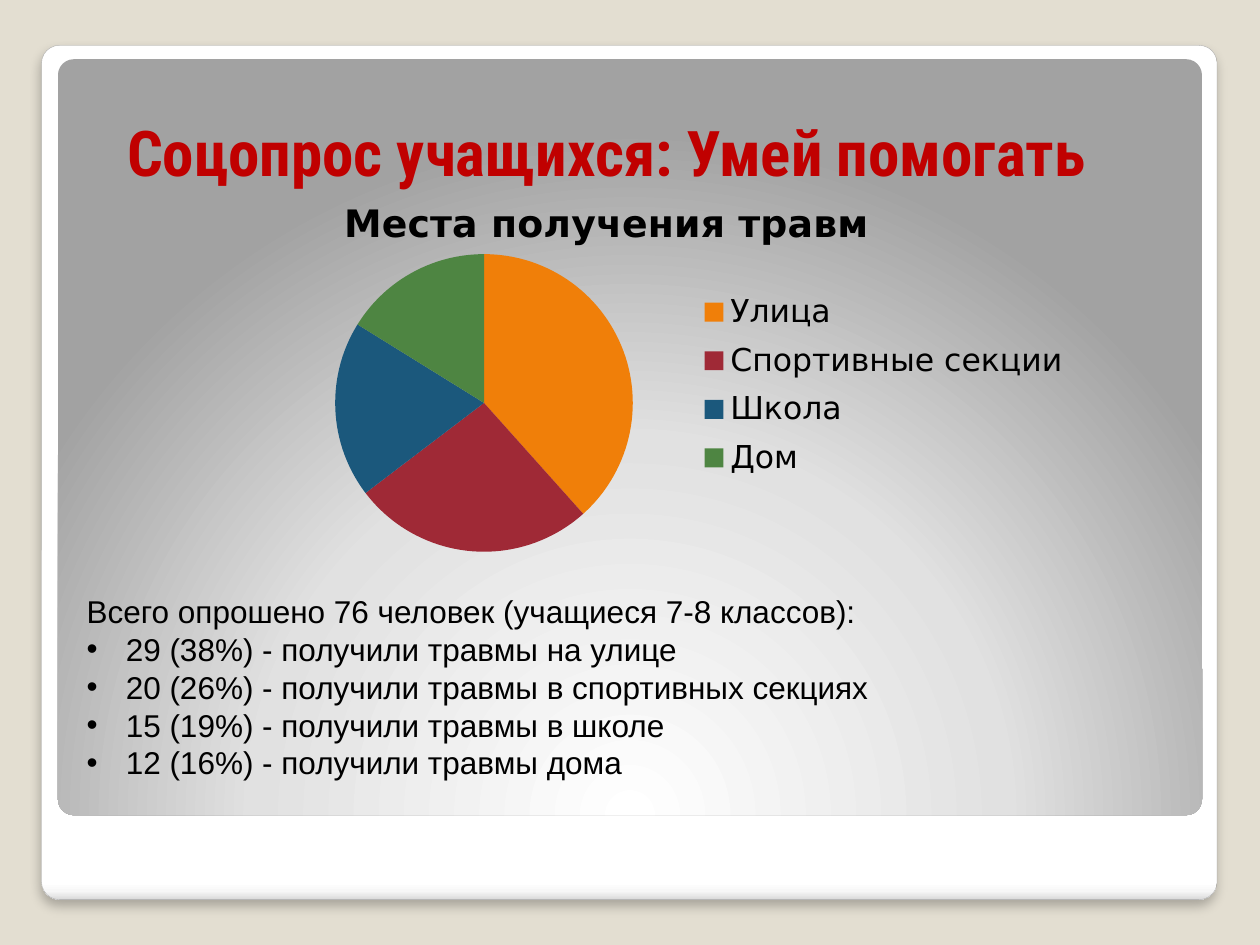
from lxml import etree
from pptx import Presentation
from pptx.chart.data import CategoryChartData
from pptx.dml.color import RGBColor
from pptx.enum.chart import XL_CHART_TYPE, XL_LEGEND_POSITION
from pptx.enum.shapes import MSO_SHAPE
from pptx.enum.text import MSO_ANCHOR
from pptx.oxml import parse_xml
from pptx.oxml.ns import nsdecls, qn
from pptx.util import Inches, Pt

PIE = XL_CHART_TYPE.PIE
LEGEND_RIGHT = XL_LEGEND_POSITION.RIGHT
ROUNDED = MSO_SHAPE.ROUNDED_RECTANGLE
BOTTOM, TOP = MSO_ANCHOR.BOTTOM, MSO_ANCHOR.TOP

# Content
TITLE = "Соцопрос учащихся: Умей помогать"
CHART_TITLE = "Места получения травм"
PLACES = [("Улица", 38), ("Спортивные секции", 26), ("Школа", 19), ("Дом", 16)]
INTRO = "Всего опрошено 76 человек (учащиеся 7-8 классов):"
RESULTS = [
    "29 (38%) - получили травмы на улице",
    "20 (26%) - получили травмы в спортивных секциях",
    "15 (19%) - получили травмы в школе",
    "12 (16%) - получили травмы дома",
]

THEME = {
    "background": "E3DED1",
    "title": ("Roboto Condensed", 36, "C00000", True),
    "body": ("Arial", 18, "000000", False),
    "chart": ("DejaVu Sans", 18, "000000", False),
    "chart_title": ("DejaVu Sans", 21.6, "000000", True),
    "slices": ["F07F09", "9F2936", "1B587C", "4E8542"],
    "frame_line": "A4A4A4",
    "frame_stops": [(0, "FFFFFF"), (98, "FFFFFF"), (99, "F7F7F7"), (100, "DADADA")],
    "panel_stops": [(0, "FFFFFF"), (55, "E1E1E1"), (100, "A2A2A2")],
}
DOWNWARD = '<a:lin ang="5400000" scaled="0"/>'
RADIAL = ('<a:path path="circle"><a:fillToRect l="50000" t="175000" '
          'r="50000" b="-75000"/></a:path>')
FRAME_SHADOW = (
    f'<a:effectLst {nsdecls("a")}><a:outerShdw blurRad="76200" dist="50800" '
    'dir="5400000" algn="tl" rotWithShape="0"><a:srgbClr val="000000">'
    '<a:alpha val="25000"/></a:srgbClr></a:outerShdw></a:effectLst>')


def style_font(font, style):
    name, size, color, bold = style
    font.name, font.size, font.bold = name, Pt(size), bold
    font.color.rgb = RGBColor.from_string(color)


def add_panel(slide, box, stops, direction):
    shape = slide.shapes.add_shape(ROUNDED, *map(Inches, box))
    shape.adjustments[0] = 0.021
    shape.shadow.inherit = False
    shape.line.fill.background()
    stop_xml = "".join(
        f'<a:gs pos="{position * 1000}"><a:srgbClr val="{color}"/></a:gs>'
        for position, color in stops)
    shape._element.spPr.find(qn("a:prstGeom")).addnext(parse_xml(
        f'<a:gradFill {nsdecls("a")} rotWithShape="1"><a:gsLst>{stop_xml}</a:gsLst>'
        f'{direction}</a:gradFill>'))
    return shape


def add_text(slide, box, lines, style, anchor, wrap):
    text_frame = slide.shapes.add_textbox(*map(Inches, box)).text_frame
    text_frame.word_wrap = wrap
    text_frame.vertical_anchor = anchor
    text_frame.text = "\n".join(lines)
    for paragraph in text_frame.paragraphs:
        style_font(paragraph.runs[0].font, style)
    return text_frame


def add_bullet(paragraph):
    properties = paragraph._p.get_or_add_pPr()
    indent = Inches(0.31)
    properties.set("marL", str(indent))
    properties.set("indent", str(-indent))
    etree.SubElement(properties, qn("a:buFont")).set("typeface", "Arial")
    etree.SubElement(properties, qn("a:buChar")).set("char", "•")


def place_chart_part(part, inner=False, **fractions):
    """Fix a chart part at fractions of the chart's size."""
    target = '<c:layoutTarget val="inner"/>' if inner else ""
    modes = "".join(f'<c:{key}Mode val="edge"/>' for key in "xy")
    values = "".join(f'<c:{key} val="{value}"/>' for key, value in fractions.items())
    layout = parse_xml(f'<c:layout {nsdecls("c")}><c:manualLayout>{target}{modes}'
                       f'{values}</c:manualLayout></c:layout>')
    for old in part.findall(qn("c:layout")):
        part.remove(old)
    before = part.find(qn("c:tx"))
    if before is None:
        before = part.find(qn("c:legendPos"))
    if before is None:
        part.insert(0, layout)
    else:
        before.addnext(layout)


def add_pie(slide, box):
    data = CategoryChartData()
    data.categories = [place for place, _ in PLACES]
    data.add_series(CHART_TITLE, [share for _, share in PLACES])
    chart = slide.shapes.add_chart(PIE, *map(Inches, box), data).chart
    style_font(chart.font, THEME["chart"])

    chart.has_title = True
    title_frame = chart.chart_title.text_frame
    title_frame.text = CHART_TITLE
    style_font(title_frame.paragraphs[0].runs[0].font, THEME["chart_title"])

    chart.has_legend = True
    chart.legend.position = LEGEND_RIGHT
    chart.legend.include_in_layout = False

    plot = chart.plots[0]
    plot.vary_by_categories = True
    for index, color in enumerate(THEME["slices"]):
        fill = plot.series[0].points[index].format.fill
        fill.solid()
        fill.fore_color.rgb = RGBColor.from_string(color)

    place_chart_part(chart.chart_title._element, x=0.24, y=0.09)
    place_chart_part(chart.legend._element, x=0.57, y=0.32, w=0.42, h=0.52)
    plot_area = chart._chartSpace.chart.plotArea
    place_chart_part(plot_area, inner=True, x=0.03, y=0.25, w=0.71, h=0.75)


def main():
    presentation = Presentation()
    presentation.slide_width, presentation.slide_height = Inches(10), Inches(7.5)
    slide = presentation.slides.add_slide(presentation.slide_layouts[6])
    background = slide.background.fill
    background.solid()
    background.fore_color.rgb = RGBColor.from_string(THEME["background"])

    # White frame with the grey panel inside
    frame = add_panel(slide, (0.33, 0.36, 9.33, 6.78), THEME["frame_stops"], DOWNWARD)
    frame.line.color.rgb = RGBColor.from_string(THEME["frame_line"])
    frame.line.width = Pt(0.16)
    properties = frame._element.spPr
    properties.replace(properties.find(qn("a:effectLst")), parse_xml(FRAME_SHADOW))
    add_panel(slide, (0.46, 0.47, 9.08, 6), THEME["panel_stops"], RADIAL)

    # Title, chart and survey results
    add_text(slide, (0.91, 0.3, 8.59, 1.25), [TITLE], THEME["title"], BOTTOM, True)
    add_pie(slide, (0.75, 1.23, 8.03, 3.15))
    results = add_text(slide, (0.59, 4.65, 6.47, 1.62), [INTRO, *RESULTS],
                       THEME["body"], TOP, False)
    for paragraph in results.paragraphs[1:]:
        add_bullet(paragraph)

    presentation.save("out.pptx")


if __name__ == "__main__":
    main()
